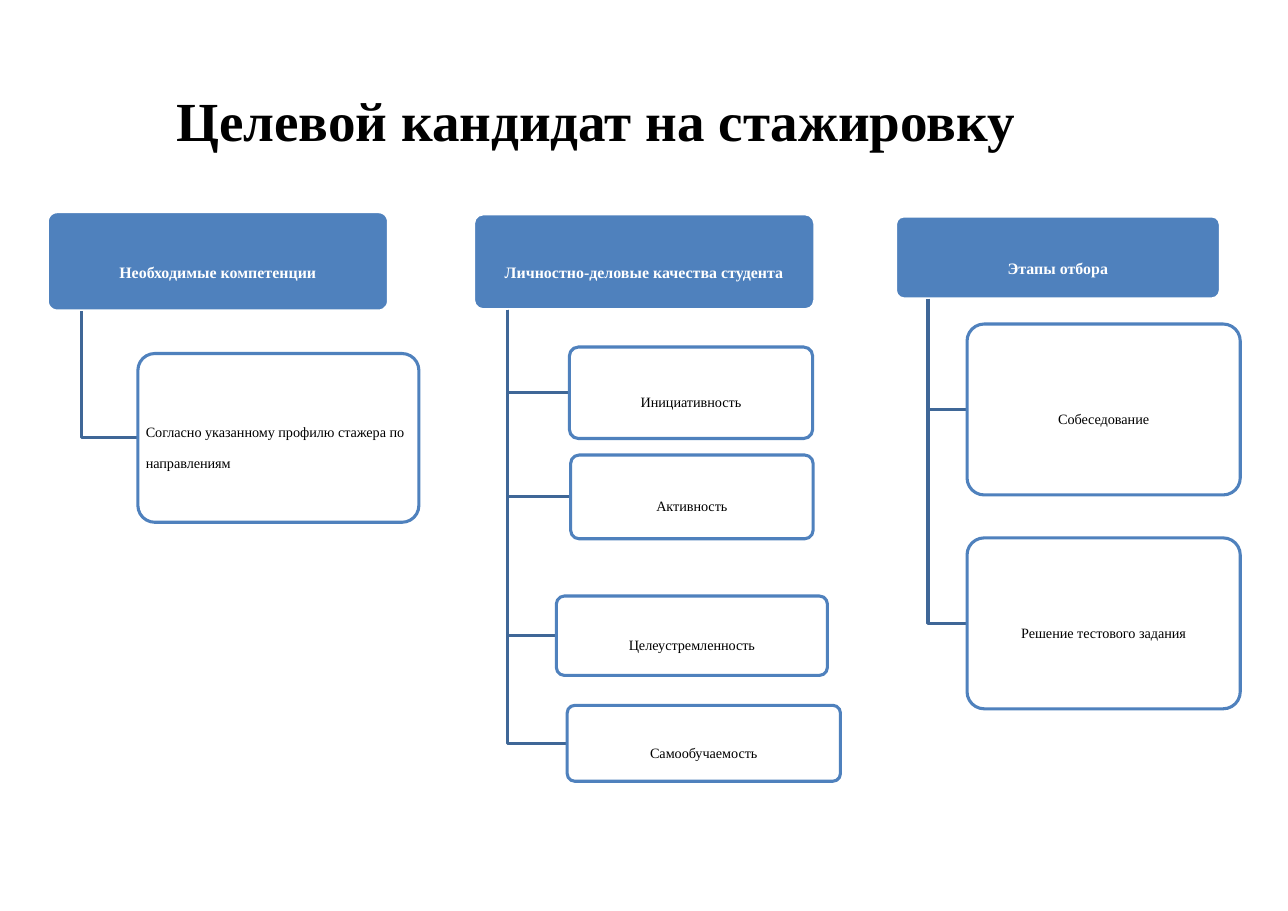
import dataclasses

import lxml.etree
import pptx
import pptx.dml.color
import pptx.enum.shapes
import pptx.enum.text
import pptx.oxml.ns
import pptx.util

Cm = pptx.util.Cm
Pt = pptx.util.Pt
ALIGN = pptx.enum.text.PP_ALIGN


@dataclasses.dataclass
class Theme:
    font: str = "Times New Roman"
    blue: str = "4F81BD"
    navy: str = "3F6797"
    white: str = "FFFFFF"
    black: str = "000000"
    title: int = 36
    head: int = 18
    item: int = 16
    line: int = 2


def color(code):
    return pptx.dml.color.RGBColor.from_string(code)


class Chart:
    def __init__(self, slide, theme):
        self.slide = slide
        self.theme = theme

    def label(self, par, text, size, code, bold=False, align=ALIGN.CENTER):
        par.alignment = align
        run = par.add_run()
        run.text = text
        font = run.font
        font.name, font.size, font.bold = self.theme.font, Pt(size), bold
        font.color.rgb = color(code)
        return run

    def title(self, text, left, top, width, height):
        shape = self.slide.shapes.title
        shape.left, shape.top = Cm(left), Cm(top)
        shape.width, shape.height = Cm(width), Cm(height)
        frame = shape.text_frame
        frame.auto_size = pptx.enum.text.MSO_AUTO_SIZE.NONE
        frame.vertical_anchor = pptx.enum.text.MSO_ANCHOR.MIDDLE
        self.label(frame.paragraphs[0], text, self.theme.title, self.theme.black, True)

    def outline(self, shape, code):
        shape.shadow.inherit = False
        shape.line.color.rgb = color(code)
        shape.line.width = Pt(self.theme.line)

    def box(self, text, place, head=False, align=ALIGN.CENTER):
        look = self.theme
        shape = self.slide.shapes.add_shape(
            pptx.enum.shapes.MSO_SHAPE.ROUNDED_RECTANGLE, *map(Cm, place))
        shape.adjustments[0] = 0.1
        shape.fill.solid()
        shape.fill.fore_color.rgb = color(look.blue if head else look.white)
        self.outline(shape, look.white if head else look.blue)
        if not head:
            # Item boxes are slightly see-through
            qn = pptx.oxml.ns.qn
            fill = shape.element.spPr.find(qn("a:solidFill"))
            lxml.etree.SubElement(fill[0], qn("a:alpha"), val="90000")

        frame = shape.text_frame
        frame.word_wrap = True
        frame.vertical_anchor = pptx.enum.text.MSO_ANCHOR.MIDDLE
        frame.margin_left = frame.margin_right = Cm(0.1 if head else 0.07)
        frame.margin_top = frame.margin_bottom = Cm(0.07 if head else 0.05)
        par = frame.paragraphs[0]
        par.line_spacing = 0.9
        run = self.label(par, text, look.head if head else look.item,
                         look.white if head else look.black, head, align)
        # Lowered baseline
        run._r.get_or_add_rPr().set("baseline", "-25000")

    def elbow(self, left, top, right, bottom):
        pen = self.slide.shapes.build_freeform(Cm(left), Cm(top))
        pen.add_line_segments(
            [(Cm(left), Cm(bottom)), (Cm(right), Cm(bottom))], close=False)
        shape = pen.convert_to_shape()
        shape.fill.background()
        self.outline(shape, self.theme.navy)

    def branch(self, name, place, items, align=ALIGN.CENTER):
        left, top, width, height = place
        self.box(name, place, head=True)
        for text, spot in items:
            # The stem leaves the head a tenth of the way along
            self.elbow(left + width / 10, top + height,
                       spot[0], spot[1] + spot[3] / 2)
            self.box(text, spot, align=align)


def main():
    deck = pptx.Presentation()
    deck.slide_width, deck.slide_height = Cm(29.7), Cm(21)
    chart = Chart(deck.slides.add_slide(deck.slide_layouts[5]), Theme())

    # Title
    chart.title("Целевой кандидат на стажировку", 3.43, 2.06, 20.62, 1.37)

    # Skills
    chart.branch("Необходимые компетенции", (1.09, 4.88, 7.87, 2.29), [
        ("Согласно указанному профилю стажера по направлениям",
         (3.18, 8.15, 6.48, 3.89)),
    ], ALIGN.LEFT)

    # Personal qualities
    chart.branch("Личностно-деловые качества студента", (10.92, 4.93, 7.87, 2.21), [
        ("Инициативность", (13.13, 8, 5.61, 2.11)),
        ("Активность", (13.16, 10.49, 5.59, 1.93)),
        ("Целеустремленность", (12.83, 13.74, 6.25, 1.83)),
        ("Самообучаемость", (13.08, 16.26, 6.3, 1.75)),
    ])

    # Selection stages
    chart.branch("Этапы отбора", (20.65, 4.98, 7.49, 1.91), [
        ("Собеседование", (22.3, 7.47, 6.3, 3.94)),
        ("Решение тестового задания", (22.3, 12.4, 6.3, 3.94)),
    ])

    deck.save("out.pptx")


if __name__ == "__main__":
    main()
